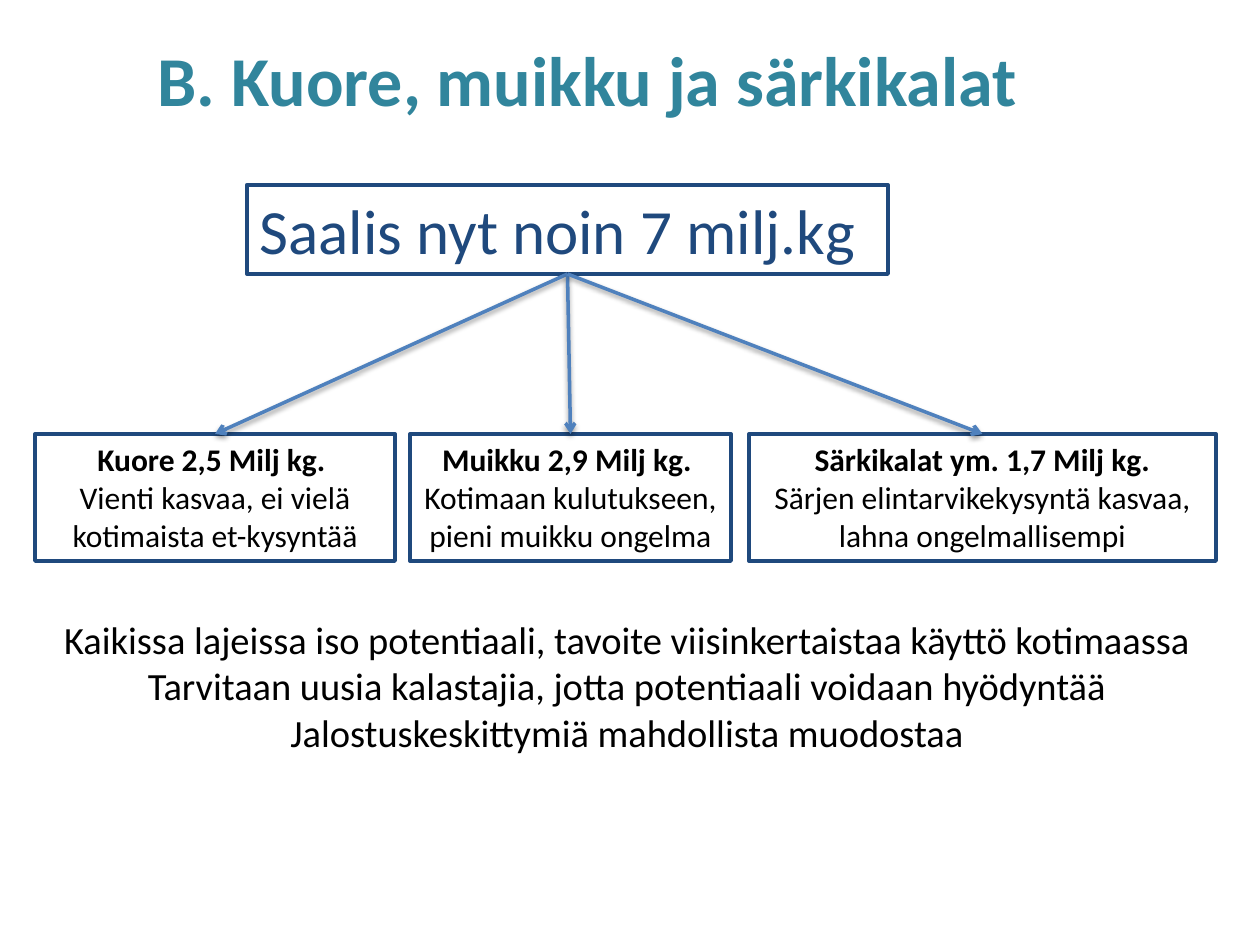
from dataclasses import dataclass

from lxml import etree
from pptx import Presentation
from pptx.dml.color import RGBColor
from pptx.enum.shapes import MSO_CONNECTOR, MSO_SHAPE
from pptx.enum.text import MSO_ANCHOR, PP_ALIGN
from pptx.oxml.ns import nsdecls, qn
from pptx.util import Emu, Pt

LEFT, CENTER = PP_ALIGN.LEFT, PP_ALIGN.CENTER
TOP = MSO_ANCHOR.TOP
RECTANGLE = MSO_SHAPE.RECTANGLE
STRAIGHT = MSO_CONNECTOR.STRAIGHT


@dataclass(frozen=True)
class Theme:
    font: str = "Calibri"
    teal: str = "31859C"
    navy: str = "1F497D"
    blue: str = "4F81BD"
    black: str = "000000"
    title_size: int = 40
    catch_size: int = 36
    species_size: int = 18
    goals_size: int = 22
    frame_width: float = 2.25
    arrow_width: int = 2


THEME = Theme()
SLIDE_SIZE = (1260, 945)

TITLE = "B. Kuore, muikku ja särkikalat"
TITLE_AREA = (145, 36, 1220, 158)
CATCH = "Saalis nyt noin 7 milj.kg"
CATCH_AREA = (247, 185, 641, 89)
SPECIES_TOP, SPECIES_HEIGHT = 434, 127
SPECIES = [
    {"left": 35, "width": 360, "wrap": True, "lines": [
        "Kuore 2,5 Milj kg. ",
        "Vienti kasvaa, ei vielä kotimaista et-kysyntää"]},
    {"left": 410, "width": 321, "wrap": False, "lines": [
        "Muikku 2,9 Milj kg. ",
        "Kotimaan kulutukseen,",
        "pieni muikku ongelma"]},
    {"left": 749, "width": 467, "wrap": True, "lines": [
        " Särkikalat ym. 1,7 Milj kg. ",
        "Särjen elintarvikekysyntä kasvaa, lahna ongelmallisempi"]},
]
GOALS = [
    "Kaikissa lajeissa iso potentiaali, tavoite viisinkertaistaa käyttö kotimaassa",
    "Tarvitaan uusia kalastajia, jotta potentiaali voidaan hyödyntää",
    "Jalostuskeskittymiä mahdollista muodostaa",
]
GOALS_AREA = (45, 610, 1164, 152)

SHADOW = (
    f'<a:effectLst {nsdecls("a")}>'
    '<a:outerShdw blurRad="39370" dist="20320" dir="5400000" rotWithShape="0">'
    '<a:srgbClr val="000000"><a:alpha val="38000"/></a:srgbClr>'
    '</a:outerShdw></a:effectLst>'
)


def px(length):
    return Emu(round(length * 914400 / 126))


def write(shape, lines, *, size, color, align=LEFT, wrap=True, bold_lines=0):
    frame = shape.text_frame
    frame.word_wrap = wrap
    frame.vertical_anchor = TOP
    for index, line in enumerate(lines):
        paragraph = frame.add_paragraph() if index else frame.paragraphs[0]
        paragraph.alignment = align
        run = paragraph.add_run()
        run.text = line
        run.font.name = THEME.font
        run.font.size = Pt(size)
        run.font.bold = index < bold_lines
        run.font.color.rgb = RGBColor.from_string(color)


def add_frame(slide, area):
    frame = slide.shapes.add_shape(RECTANGLE, *map(px, area))
    frame.shadow.inherit = False
    frame.fill.background()
    frame.line.color.rgb = RGBColor.from_string(THEME.navy)
    frame.line.width = Pt(THEME.frame_width)
    return frame


def add_arrow(slide, start, end):
    arrow = slide.shapes.add_connector(STRAIGHT, *map(px, start + end))
    arrow.line.color.rgb = RGBColor.from_string(THEME.blue)
    arrow.line.width = Pt(THEME.arrow_width)
    etree.SubElement(arrow.line._get_or_add_ln(), qn("a:tailEnd"), type="arrow")
    arrow._element.spPr.append(etree.fromstring(SHADOW))


def main():
    deck = Presentation()
    deck.slide_width, deck.slide_height = map(px, SLIDE_SIZE)
    slide = deck.slides.add_slide(deck.slide_layouts[5])

    title = slide.shapes.title
    title.left, title.top, title.width, title.height = map(px, TITLE_AREA)
    title.text_frame.margin_top = 0
    write(title, [TITLE], size=THEME.title_size, color=THEME.teal, bold_lines=1)

    catch = add_frame(slide, CATCH_AREA)
    write(catch, [CATCH], size=THEME.catch_size, color=THEME.navy)

    left, top, width, height = CATCH_AREA
    fork = (left + width / 2, top + height)
    for species in SPECIES:
        left, width = species["left"], species["width"]
        box = add_frame(slide, (left, SPECIES_TOP, width, SPECIES_HEIGHT))
        write(box, species["lines"], size=THEME.species_size, color=THEME.black,
              align=CENTER, wrap=species["wrap"], bold_lines=1)
        add_arrow(slide, fork, (left + width / 2, SPECIES_TOP))

    goals = slide.shapes.add_textbox(*map(px, GOALS_AREA))
    write(goals, GOALS, size=THEME.goals_size, color=THEME.black,
          align=CENTER, wrap=False)

    deck.save("out.pptx")


if __name__ == "__main__":
    main()
